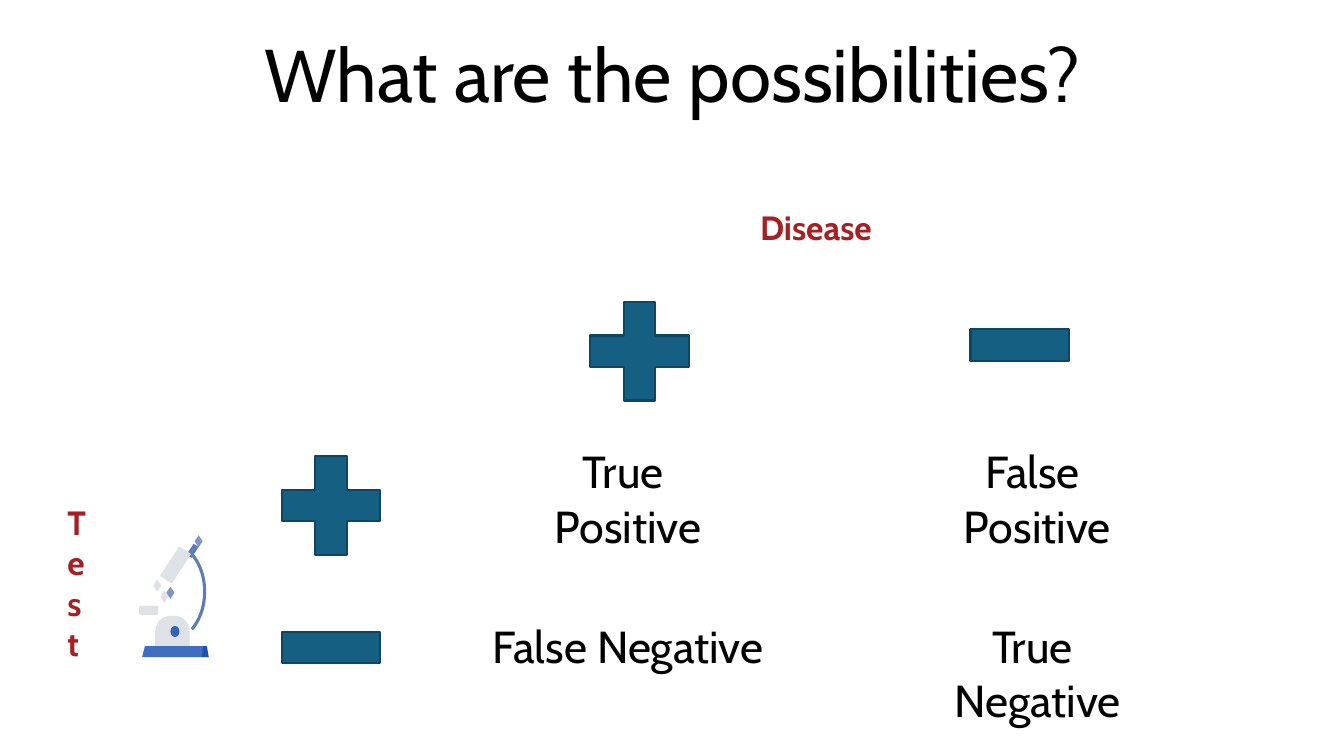
from dataclasses import dataclass

from pptx import Presentation
from pptx import util as u
from pptx.dml.color import RGBColor
from pptx.enum import shapes, text


@dataclass(frozen=True)
class Theme:
    font: str = "Cabin"
    ink: str = "000000"
    accent: str = "A71E23"
    sign: str = "156082"
    sign_edge: str = "104760"
    body: str = "DEE2E6"
    knob: str = "3362BA"
    arm: str = "5E7CB5"
    foot: str = "416DBE"
    foot_end: str = "1C51B2"
    lens: str = "7C95C3"
    title_size: float = 53.3
    cell_size: int = 32
    label_size: int = 24


THEME = Theme()
PX = u.Inches(0.01)
KIND = shapes.MSO_SHAPE


class Canvas:
    def __init__(self, page, theme):
        self.page = page
        self.theme = theme

    def style(self, frame, size, color, bold=False, align=text.PP_ALIGN.LEFT):
        for para in frame.paragraphs:
            para.alignment = align
            for span in para.runs:
                span.font.name = self.theme.font
                span.font.size = u.Pt(size)
                span.font.bold = bold
                span.font.color.rgb = RGBColor.from_string(color)

    def title(self, words, left, top, width, height):
        box = self.page.shapes.title
        box.left, box.top, box.width, box.height = (
            v * PX for v in (left, top, width, height))
        box.text_frame.text = words
        self.style(box.text_frame, self.theme.title_size, self.theme.ink,
                   align=text.PP_ALIGN.CENTER)

    def label(self, words, left, top, width, height):
        box = self.page.shapes.add_textbox(*(v * PX for v in (left, top, width, height)))
        frame = box.text_frame
        frame.text = words
        frame.word_wrap = True
        frame.auto_size = text.MSO_AUTO_SIZE.SHAPE_TO_FIT_TEXT
        self.style(frame, self.theme.label_size, self.theme.accent, bold=True)

    def shape(self, kind, bounds, fill=None, line=None, weight=1.5, turn=0):
        shape = self.page.shapes.add_shape(kind, *(v * PX for v in bounds))
        shape.shadow.inherit = False
        shape.rotation = turn
        if fill:
            shape.fill.solid()
            shape.fill.fore_color.rgb = RGBColor.from_string(fill)
        else:
            shape.fill.background()
        if line:
            shape.line.color.rgb = RGBColor.from_string(line)
            shape.line.width = u.Pt(weight)
        else:
            shape.line.fill.background()
        return shape

    def sign(self, kind, left, top, size=133):
        self.shape(kind, (left, top, size, size), self.theme.sign, self.theme.sign_edge)

    def microscope(self):
        theme = self.theme
        dome = self.shape(KIND.ROUND_2_SAME_RECTANGLE, (154, 611, 34, 30), theme.body)
        dome.adjustments[0] = 0.5
        self.shape(KIND.ROUNDED_RECTANGLE, (138, 601, 19, 9), theme.body)
        self.shape(KIND.OVAL, (169, 621, 9, 11), theme.knob)
        arm = self.shape(KIND.ARC, (131, 538, 72, 98), line=theme.arm, weight=2.2)
        arm.adjustments[0], arm.adjustments[1] = 181.2, 34.8
        self.shape(KIND.TRAPEZOID, (141, 641, 66, 11), theme.foot)
        self.shape(KIND.TRAPEZOID, (200, 641, 7, 11), theme.foot_end)
        for left, top, color in ((193, 531, theme.lens), (165, 582, theme.lens),
                                 (152, 575, theme.body), (159, 586, theme.body)):
            self.shape(KIND.DIAMOND, (left, top, 8, 12), color)
        self.shape(KIND.RECTANGLE, (188, 540, 6, 13), theme.arm, turn=33)
        self.shape(KIND.RECTANGLE, (167, 543, 14, 35), theme.body, turn=33)

    def table(self, rows, left, top, widths, heights):
        grid = self.page.shapes.add_table(
            len(rows), len(widths), left * PX, top * PX,
            sum(widths) * PX, sum(heights) * PX).table
        grid.first_row = grid.horz_banding = False
        for column, width in zip(grid.columns, widths):
            column.width = width * PX
        for row, height, entries in zip(grid.rows, heights, rows):
            row.height = height * PX
            for cell, words in zip(row.cells, entries):
                cell.fill.background()
                cell.margin_left = cell.margin_right = 13 * PX
                cell.margin_top = cell.margin_bottom = 7 * PX
                cell.text_frame.text = words
                self.style(cell.text_frame, self.theme.cell_size, self.theme.ink,
                           align=text.PP_ALIGN.CENTER)


def main():
    deck = Presentation()
    deck.slide_width, deck.slide_height = 1333 * PX, 750 * PX
    canvas = Canvas(deck.slides.add_slide(deck.slide_layouts[5]), THEME)
    canvas.title("What are the possibilities? ", 105, 22, 1140, 100)
    canvas.microscope()
    for kind, left, top in ((KIND.MATH_PLUS, 568, 282), (KIND.MATH_MINUS, 945, 276),
                            (KIND.MATH_PLUS, 262, 435), (KIND.MATH_MINUS, 262, 576)):
        canvas.sign(kind, left, top)
    canvas.table([["True \nPositive", "False \nPositive"],
                  ["False Negative", "True \nNegative"]],
                 420, 435, [406, 406], [173, 147])
    canvas.label("Disease", 744, 200, 444, 50)
    canvas.label("Test", 57, 493, 43, 172)
    deck.save("out.pptx")


if __name__ == "__main__":
    main()
